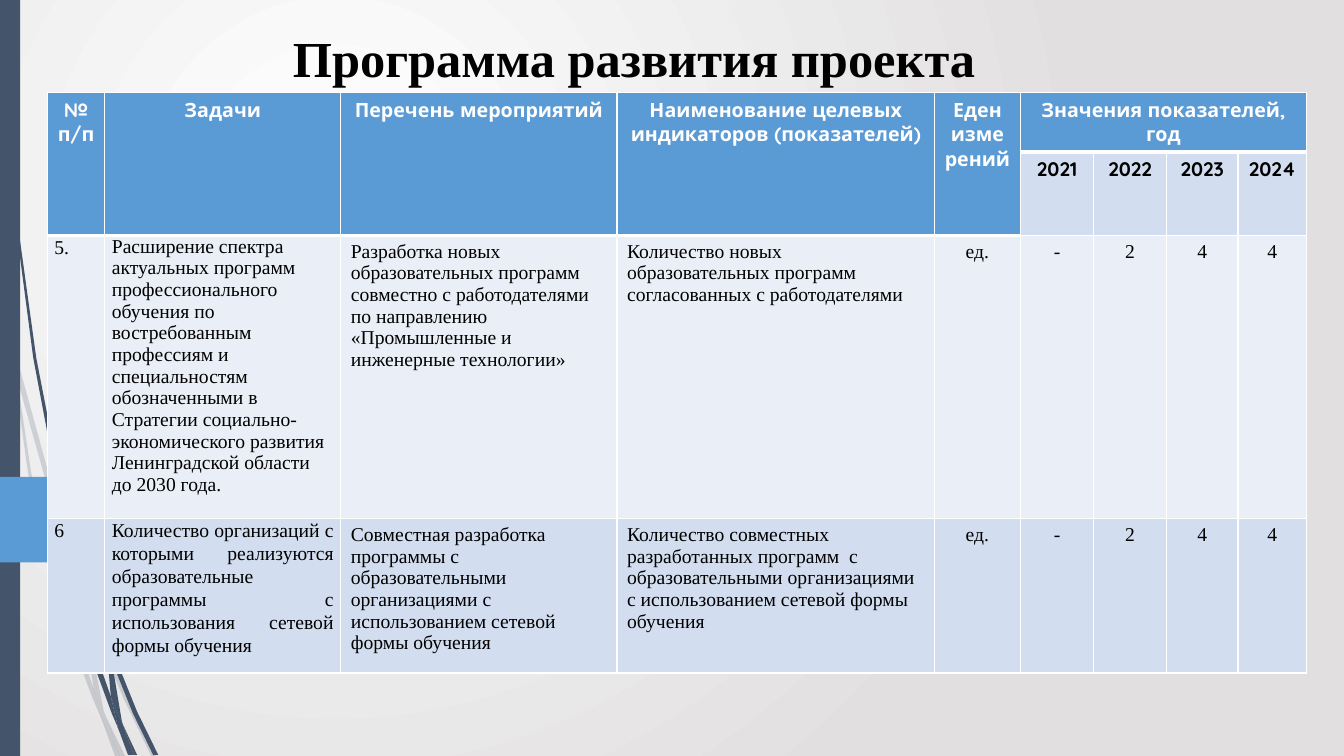
from dataclasses import dataclass

from lxml import etree
from pptx import Presentation, util as u
from pptx.dml.color import RGBColor
from pptx.enum import shapes, text
from pptx.oxml import ns


@dataclass(frozen=True)
class Theme:
    slate: str = "44546A"
    blue: str = "5B9BD5"
    band_dark: str = "D2DEEF"
    band_light: str = "EAEFF7"
    white: str = "FFFFFF"
    grey: str = "E1DFDF"
    black: str = "000000"
    serif: str = "Times New Roman"
    sans: str = "Quicksand"
    title_size: int = 36
    table_size: int = 14


# Outlines of the stems, in hundredths of an inch
PALE_STEMS = [
    [(11, 350), (9, 322), (0, 282), (0, 299), (10, 344)],
    [(58, 522), (84, 599), (85, 586), (62, 520), (14, 345), (17, 376)],
    [(92, 607), (88, 596), (88, 610), (123, 694), (150, 750), (155, 750), (127, 692)],
    [(119, 750), (124, 750), (105, 711)],
    [(93, 683), (70, 619), (31, 469), (17, 376), (11, 350), (28, 470), (65, 621),
     (92, 693), (101, 714), (99, 707)],
    [(84, 599), (87, 646), (93, 683), (96, 692), (105, 711), (103, 706), (91, 646),
     (88, 610), (88, 608)],
    [(88, 584), (110, 462), (160, 349), (229, 245), (268, 198), (290, 175), (312, 154),
     (312, 153), (289, 175), (268, 197), (228, 244), (158, 348), (107, 461), (85, 584),
     (85, 586), (88, 596)],
    [(101, 714), (114, 750), (119, 750)],
    [(88, 608), (88, 610), (88, 596), (85, 586), (84, 599)],
    [(96, 692), (93, 683), (99, 707), (101, 714), (119, 750), (105, 711)],
]
DARK_STEMS = [
    [(7, 110), (17, 233), (33, 355), (56, 477), (57, 481), (55, 457), (55, 453), (36, 355),
     (19, 232), (8, 109), (5, 48), (4, 0), (3, 0), (4, 48)],
    [(88, 592), (106, 645), (106, 633), (106, 631), (93, 590), (60, 472), (64, 505)],
    [(113, 649), (110, 641), (111, 656), (132, 708), (152, 749), (157, 749), (136, 706)],
    [(110, 691), (98, 657), (72, 556), (64, 505), (57, 477), (68, 557), (93, 659),
     (111, 708), (117, 722), (116, 717)],
    [(60, 472), (58, 453), (54, 349), (58, 245), (63, 193), (70, 141), (62, 193), (56, 245),
     (52, 349), (55, 449)],
    [(133, 749), (136, 749), (122, 719)],
    [(57, 477), (64, 505), (60, 472), (55, 449), (55, 453)],
    [(111, 633), (125, 552), (158, 476), (205, 406), (231, 374), (245, 359), (261, 344),
     (260, 344), (245, 358), (231, 373), (204, 405), (156, 474), (122, 551), (106, 631),
     (110, 641)],
    [(117, 722), (127, 749), (131, 749)],
    [(106, 645), (110, 691), (116, 706), (122, 719), (121, 716), (111, 656), (109, 651)],
    [(106, 645), (109, 651), (111, 656), (110, 641), (106, 631), (106, 633)],
    [(116, 706), (110, 691), (116, 717), (117, 722), (130, 749), (133, 749), (122, 719)],
]
ARROW_TAB = [(0, 473), (147, 473), (151, 474), (190, 513), (190, 517), (151, 556),
             (147, 558), (0, 558)]

COLUMNS = [0.57, 2.34, 2.74, 3.15, 0.85, 0.73, 0.72, 0.71, 0.68]
ROWS = [0.58, 0.83, 2.81, 1.53]
HEADINGS = ["№ п/п", "Задачи", "Перечень мероприятий",
            "Наименование целевых индикаторов (показателей)", "Еден измерений",
            "Значения показателей, год"]
YEARS = ["2021", "2022", "2023", "2024"]
TASKS = [
    ["5.",
     "Расширение спектра актуальных программ профессионального обучения по востребованным "
     "профессиям и специальностям обозначенными в Стратегии социально-экономического "
     "развития Ленинградской области до 2030 года.",
     "Разработка новых образовательных программ совместно с работодателями по направлению "
     "«Промышленные и инженерные технологии»",
     "Количество новых образовательных программ согласованных с работодателями",
     "ед.", "-", "2", "4", "4"],
    ["6",
     "Количество организаций с которыми реализуются образовательные программы "
     "с использования сетевой формы обучения",
     "Совместная разработка программы с образовательными организациями с использованием "
     "сетевой формы обучения",
     "Количество совместных разработанных программ  с образовательными организациями "
     "с использованием сетевой формы обучения",
     "ед.", "-", "2", "4", "4"],
]


class Deck:
    def __init__(self, theme):
        self.theme = theme
        self.prs = Presentation()
        self.prs.slide_width, self.prs.slide_height = u.Inches(13.33), u.Inches(7.5)
        self.slide = self.prs.slides.add_slide(self.prs.slide_layouts[5])

    def background(self, inner, outer):
        fill = self.slide.background.fill
        fill.gradient()
        for stop, color, position in zip(fill.gradient_stops, (inner, outer), (0, 1)):
            stop.color.rgb = RGBColor.from_string(color)
            stop.position = position
        gradient = next(self.slide.element.iter(ns.qn("a:gradFill")))
        gradient.remove(gradient.find(ns.qn("a:lin")))
        circle = etree.SubElement(gradient, ns.qn("a:path"), {"path": "circle"})
        etree.SubElement(circle, ns.qn("a:fillToRect"),
                         {"l": "50000", "t": "50000", "r": "100000", "b": "100000"})

    def paint(self, shape, color, opacity=100):
        shape.shadow.inherit = False
        shape.line.fill.background()
        shape.fill.solid()
        shape.fill.fore_color.rgb = RGBColor.from_string(color)
        if opacity < 100:
            tint = next(shape.element.spPr.iter(ns.qn("a:srgbClr")))
            etree.SubElement(tint, ns.qn("a:alpha"), {"val": str(opacity * 1000)})

    def outline(self, points, color, opacity=100):
        builder = self.slide.shapes.build_freeform(*points[0], scale=u.Inches(0.01))
        builder.add_line_segments(points[1:], close=True)
        self.paint(builder.convert_to_shape(), color, opacity)

    def rectangle(self, left, top, width, height, color):
        box = map(u.Inches, (left, top, width, height))
        self.paint(self.slide.shapes.add_shape(shapes.MSO_SHAPE.RECTANGLE, *box), color)

    def put_text(self, frame, words, font, size, color, bold, **layout):
        """Fill a text frame with one paragraph; layout holds its paragraph format."""
        paragraph = frame.paragraphs[0]
        for name, value in layout.items():
            setattr(paragraph, name, value)
        run = paragraph.add_run()
        run.text = words
        for name, value in dict(name=font, size=u.Pt(size), bold=bold).items():
            setattr(run.font, name, value)
        run.font.color.rgb = RGBColor.from_string(color)

    def title(self, words, left, top, width, height):
        heading = self.slide.shapes.title
        for name, value in dict(left=left, top=top, width=width, height=height).items():
            setattr(heading, name, u.Inches(value))
        frame = heading.text_frame
        frame.word_wrap = True
        frame.auto_size = text.MSO_AUTO_SIZE.NONE
        frame.vertical_anchor = text.MSO_ANCHOR.TOP
        self.put_text(frame, words, self.theme.serif, self.theme.title_size,
                      self.theme.black, True, alignment=text.PP_ALIGN.CENTER)

    def table(self, left, top, columns, rows):
        frame = self.slide.shapes.add_table(len(rows), len(columns), u.Inches(left), u.Inches(top),
                                            u.Inches(sum(columns)), u.Inches(sum(rows)))
        grid = frame.table
        grid.horz_banding = False
        for column, width in zip(grid.columns, columns):
            column.width = u.Inches(width)
        for row, height in zip(grid.rows, rows):
            row.height = u.Inches(height)
        return grid

    def cell(self, cell, fill, bottom=1):
        """Fill a cell and give it white borders, the bottom one as wide as asked."""
        cell.fill.solid()
        cell.fill.fore_color.rgb = RGBColor.from_string(fill)
        properties = cell._tc.get_or_add_tcPr()
        for index, (side, width) in enumerate(zip("LRTB", (1, 1, 1, bottom))):
            border = etree.Element(ns.qn(f"a:ln{side}"), {"w": str(u.Pt(width))})
            solid = etree.SubElement(border, ns.qn("a:solidFill"))
            etree.SubElement(solid, ns.qn("a:srgbClr"), {"val": self.theme.white})
            properties.insert(index, border)


def fill_header(deck, grid):
    theme, center = deck.theme, text.PP_ALIGN.CENTER
    last = len(HEADINGS) - 1
    for c in range(len(COLUMNS)):
        deck.cell(grid.cell(0, c), theme.blue, bottom=3)
        deck.cell(grid.cell(1, c), theme.blue if c < last else theme.band_dark)
    for c, words in enumerate(HEADINGS):
        end = grid.cell(1, c) if c < last else grid.cell(0, len(COLUMNS) - 1)
        grid.cell(0, c).merge(end)
        deck.put_text(grid.cell(0, c).text_frame, words, theme.sans, theme.table_size,
                      theme.white, True, alignment=center)
    for c, year in enumerate(YEARS, last):
        deck.put_text(grid.cell(1, c).text_frame, year, theme.sans, theme.table_size,
                      theme.black, True, alignment=center)


def fill_tasks(deck, grid):
    theme, align = deck.theme, text.PP_ALIGN
    tight = dict(margin_left=0.07, margin_top=0, margin_right=0.07, margin_bottom=0)
    justified = dict(alignment=align.JUSTIFY, line_spacing=1.06, space_before=u.Pt(12))
    for r, (task, band) in enumerate(zip(TASKS, (theme.band_light, theme.band_dark)), 2):
        for c, words in enumerate(task):
            cell = grid.cell(r, c)
            deck.cell(cell, band)
            if c < 2:
                for name, value in tight.items():
                    setattr(cell, name, u.Inches(value))
            layout = dict(alignment=align.CENTER if c > 3 else align.LEFT)
            if c == 0 or (r, c) == (3, 1):
                layout = justified
            deck.put_text(cell.text_frame, words, theme.serif, theme.table_size,
                          theme.black, False, **layout)


def main():
    theme = Theme()
    deck = Deck(theme)
    deck.background(theme.white, theme.grey)
    for stems, opacity in ((PALE_STEMS, 20), (DARK_STEMS, 100)):
        for stem in stems:
            deck.outline(stem, theme.slate, opacity)
    deck.rectangle(0, 0, 0.2, 7.5, theme.slate)
    deck.outline(ARROW_TAB, theme.blue)
    grid = deck.table(0.47, 0.92, COLUMNS, ROWS)
    fill_header(deck, grid)
    fill_tasks(deck, grid)
    deck.title("Программа развития проекта", 1.11, 0.22, 10.36, 0.71)
    deck.prs.save("out.pptx")


if __name__ == "__main__":
    main()
